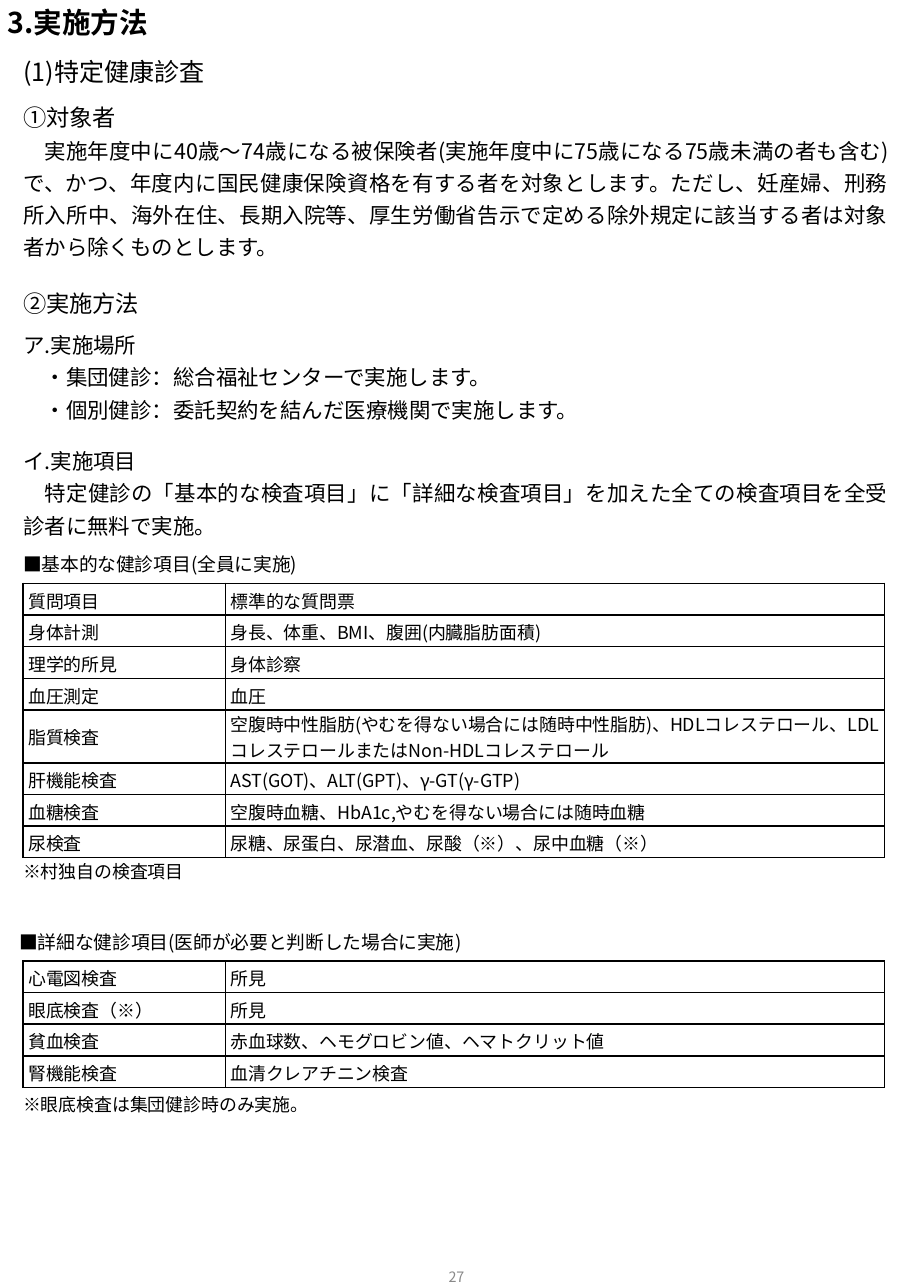
import pptx
import pptx.util
import pptx.dml.color
import pptx.enum.text
import pptx.oxml.ns
import lxml.etree

Inches = pptx.util.Inches
Pt = pptx.util.Pt
ALIGN = pptx.enum.text.PP_ALIGN
ANCHOR = pptx.enum.text.MSO_ANCHOR
FIT = pptx.enum.text.MSO_AUTO_SIZE

COLORS = {"ink": "000000", "paper": "FFFFFF", "grey": "898989"}
FONT = "Noto Sans CJK JP"
LEFT = 0.18
WIDE = 6.82
ROW = 0.246

BASIC = [
    ("質問項目", "標準的な質問票"),
    ("身体計測", "身長、体重、BMI、腹囲(内臓脂肪面積)"),
    ("理学的所見", "身体診察"),
    ("血圧測定", "血圧"),
    ("脂質検査", "空腹時中性脂肪(やむを得ない場合には随時中性脂肪)、HDLコレステロール、LDLコレステロールまたはNon-HDLコレステロール"),
    ("肝機能検査", "AST(GOT)、ALT(GPT)、γ-GT(γ-GTP)"),
    ("血糖検査", "空腹時血糖、HbA1c,やむを得ない場合には随時血糖"),
    ("尿検査", "尿糖、尿蛋白、尿潜血、尿酸（※）、尿中血糖（※）"),
]
DETAIL = [
    ("心電図検査", "所見"),
    ("眼底検査（※）", "所見"),
    ("貧血検査", "赤血球数、ヘモグロビン値、ヘマトクリット値"),
    ("腎機能検査", "血清クレアチニン検査"),
]


def tint(name):
    return pptx.dml.color.RGBColor.from_string(COLORS[name])


def write(frame, lines, size=12, first=None, align=ALIGN.JUSTIFY, space=1.25,
          bold=False, color="ink"):
    frame.word_wrap = True
    for i, line in enumerate(lines):
        para = frame.paragraphs[0] if i == 0 else frame.add_paragraph()
        para.alignment = align
        para.line_spacing = space
        para.space_before = para.space_after = Pt(0)
        props = para._p.get_or_add_pPr()
        props.set("marL", "0")
        props.set("indent", "0")
        lxml.etree.SubElement(props, pptx.oxml.ns.qn("a:buNone"))
        run = para.add_run()
        run.text = line
        font = run.font
        font.size = Pt(first if first and i == 0 else size)
        font.name = FONT
        font.bold = bold
        font.color.rgb = tint(color)
        east = lxml.etree.SubElement(run._r.get_or_add_rPr(), pptx.oxml.ns.qn("a:ea"))
        east.set("typeface", FONT)


def place(shape, box, pad=0, right=0.1, anchor=ANCHOR.TOP, grow=False):
    shape.left, shape.top, shape.width, shape.height = map(Inches, box)
    frame = shape.text_frame
    frame.margin_left, frame.margin_right = 0, Inches(right)
    frame.margin_top = frame.margin_bottom = Inches(pad)
    frame.vertical_anchor = anchor
    frame.auto_size = FIT.SHAPE_TO_FIT_TEXT if grow else FIT.NONE
    return frame


def label(slide, box, lines, pad=0, right=0.1, anchor=ANCHOR.TOP, grow=False, **style):
    shape = slide.shapes.add_textbox(*map(Inches, box))
    write(place(shape, box, pad, right, anchor, grow), lines, **style)


def border(cell):
    props = cell._tc.get_or_add_tcPr()
    for side in ("lnL", "lnR", "lnT", "lnB"):
        line = lxml.etree.SubElement(props, pptx.oxml.ns.qn("a:" + side), w=str(Pt(1)))
        fill = lxml.etree.SubElement(line, pptx.oxml.ns.qn("a:solidFill"))
        lxml.etree.SubElement(fill, pptx.oxml.ns.qn("a:srgbClr"), val=COLORS["ink"])


def grid(slide, box, rows, tall=None):
    table = slide.shapes.add_table(len(rows), 2, *map(Inches, box)).table
    table.first_row = table.horz_banding = False
    for col, width in zip(table.columns, (1.57, 5.12)):
        col.width = Inches(width)
    for r, texts in enumerate(rows):
        table.rows[r].height = Inches(0.41 if r == tall else ROW)
        for c, text in enumerate(texts):
            cell = table.cell(r, c)
            border(cell)
            cell.fill.solid()
            cell.fill.fore_color.rgb = tint("paper")
            cell.vertical_anchor = ANCHOR.MIDDLE
            cell.margin_left = cell.margin_right = Inches(0.04)
            cell.margin_top = Inches(0 if r == tall else 0.03)
            cell.margin_bottom = Inches(0 if r == tall else 0.01)
            write(cell.text_frame, [text], size=10, align=ALIGN.LEFT, space=1.0)


def intro(slide):
    frame = place(slide.shapes.title, (0.06, -0.01, 6.32, 0.37), pad=0.05,
                  right=0, anchor=ANCHOR.MIDDLE, grow=True)
    write(frame, ["3.実施方法"], size=16, space=1.0, bold=True)
    label(slide, (LEFT, 0.33, 6.32, 0.4), ["(1)特定健康診査"], pad=0.05, right=0, size=14)
    label(slide, (LEFT, 0.75, WIDE, 0.85), [
        "①対象者",
        "　実施年度中に40歳～74歳になる被保険者(実施年度中に75歳になる75歳未満の者も含む)で、"
        "かつ、年度内に国民健康保険資格を有する者を対象とします。ただし、妊産婦、刑務所入所中、"
        "海外在住、長期入院等、厚生労働省告示で定める除外規定に該当する者は対象者から除くものとします。",
    ], first=13)


def method(slide):
    label(slide, (LEFT, 2.19, 1.97, 0.24), ["②実施方法"], size=13)
    frame = place(slide.placeholders[1], (LEFT, 2.53, WIDE, 0.51))
    write(frame, [
        "ア.実施場所",
        "　・集団健診：総合福祉センターで実施します。",
        "　・個別健診：委託契約を結んだ医療機関で実施します。",
    ])
    label(slide, (LEFT, 3.43, WIDE, 0.72), [
        "イ.実施項目",
        "　特定健診の「基本的な検査項目」に「詳細な検査項目」を加えた全ての検査項目を全受診者に無料で実施。",
    ], grow=True)


def exams(slide, box, head, rows, note, shift=0, lift=0, tall=None):
    left, top, width, height = box
    label(slide, (left - shift, top - 0.28, WIDE, 0.19), [head], grow=True, size=10.5)
    grid(slide, box, rows, tall)
    label(slide, (left, top + height - lift, width, 0.28), [note], pad=0.05,
          grow=True, size=10, align=ALIGN.LEFT, space=1.0)


def main():
    deck = pptx.Presentation()
    deck.slide_width, deck.slide_height = Inches(7.09), Inches(10)
    slide = deck.slides.add_slide(deck.slide_layouts[1])
    intro(slide)
    method(slide)
    exams(slide, (LEFT, 4.53, 6.69, 2.13), "■基本的な健診項目(全員に実施)",
          BASIC, "※村独自の検査項目", lift=0.03, tall=4)
    exams(slide, (LEFT, 7.46, 6.69, 0.98), "■詳細な健診項目(医師が必要と判断した場合に実施)",
          DETAIL, "※眼底検査は集団健診時のみ実施。", shift=0.03)
    label(slide, (2.72, 9.65, 1.65, 0.53), ["27"], right=0, anchor=ANCHOR.MIDDLE,
          size=8, align=ALIGN.CENTER, space=1.0, color="grey")
    deck.save("out.pptx")


if __name__ == "__main__":
    main()
